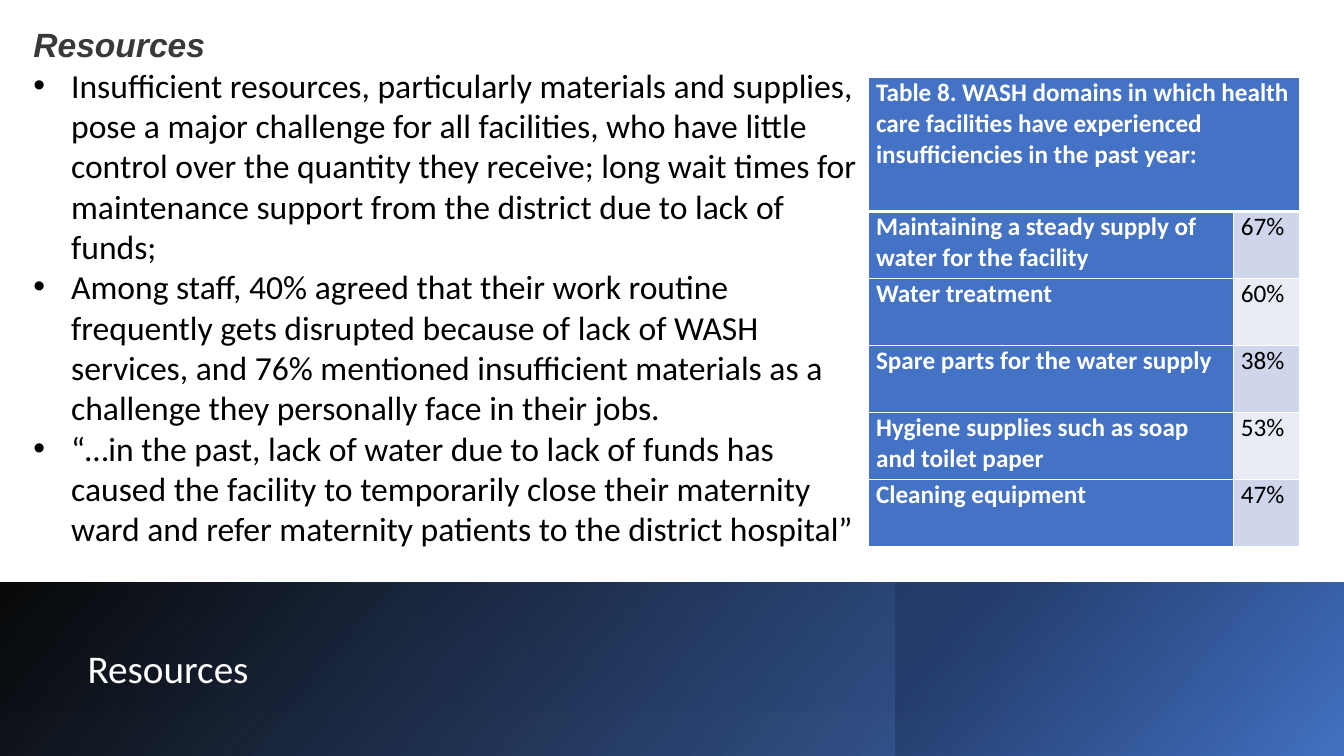
from dataclasses import dataclass
from typing import Any

from lxml import etree
from pptx import Presentation
from pptx.dml.color import RGBColor
from pptx.enum.shapes import MSO_SHAPE
from pptx.enum.text import MSO_ANCHOR, MSO_AUTO_SIZE, PP_ALIGN
from pptx.oxml.ns import qn
from pptx.util import Pt

RECTANGLE = MSO_SHAPE.RECTANGLE
MIDDLE, TOP = MSO_ANCHOR.MIDDLE, MSO_ANCHOR.TOP
GROW, NO_FIT = MSO_AUTO_SIZE.SHAPE_TO_FIT_TEXT, MSO_AUTO_SIZE.NONE
LEFT = PP_ALIGN.LEFT

WHITE = RGBColor(0xFF, 0xFF, 0xFF)
BLACK = RGBColor(0, 0, 0)
CHARCOAL = RGBColor(0x3B, 0x38, 0x38)
BLUE = RGBColor(0x44, 0x72, 0xC4)
MID_BLUE = RGBColor(0x2F, 0x55, 0x97)
NAVY = RGBColor(0x20, 0x38, 0x64)
BAND_DARK = RGBColor(0xCF, 0xD5, 0xEA)
BAND_LIGHT = RGBColor(0xE9, 0xEB, 0xF5)


@dataclass
class Stop:
    position: int
    color: RGBColor
    opacity: int = 100


@dataclass
class Panel:
    left: float
    width: float
    height: float
    angle: int
    stops: tuple[Stop, Stop]
    rotation: int = 0


@dataclass
class Domain:
    label: str
    share: str


BANNER_TOP = 416.2
PANELS = [
    Panel(0, 960, 91.4, 210, (Stop(28, MID_BLUE, 11), Stop(100, BLACK, 77))),
    Panel(0, 960, 125.3, 140, (Stop(0, BLACK, 96), Stop(100, BLUE))),
    Panel(640, 320, 123.8, 320, (Stop(19, NAVY, 68), Stop(100, BLUE, 79)), 180),
]

FINDINGS = [
    "Insufficient resources, particularly materials and supplies, pose a major "
    "challenge for all facilities, who have little control over the quantity they "
    "receive; long wait times for maintenance support from the district due to lack "
    "of funds;",
    "Among staff, 40% agreed that their work routine frequently gets disrupted "
    "because of lack of WASH services, and 76% mentioned insufficient materials as a "
    "challenge they personally face in their jobs.",
    "“…in the past, lack of water due to lack of funds has caused the facility to "
    "temporarily close their maternity ward and refer maternity patients to the "
    "district hospital”",
]

TABLE_HEADING = ("Table 8. WASH domains in which health care facilities have "
                 "experienced insufficiencies in the past year:")
DOMAINS = [
    Domain("Maintaining a steady supply of water for the facility", "67%"),
    Domain("Water treatment", "60%"),
    Domain("Spare parts for the water supply", "38%"),
    Domain("Hygiene supplies such as soap and toilet paper", "53%"),
    Domain("Cleaning equipment", "47%"),
]
COLUMN_WIDTHS = (260.6, 46.8)
HEADING_HEIGHT, DOMAIN_HEIGHT = 95.8, 47.9


def apply(target: Any, formats: dict[str, Any]) -> None:
    for name, value in formats.items():
        setattr(target, name, value)


def place(shape: Any, left: float, top: float, width: float, height: float) -> None:
    apply(shape, {"left": Pt(left), "top": Pt(top),
                  "width": Pt(width), "height": Pt(height)})


def style_font(font: Any, color: RGBColor, **formats: Any) -> None:
    apply(font, formats)
    font.color.rgb = color


def add_panel(shapes: Any, panel: Panel) -> None:
    shape = shapes.add_shape(RECTANGLE, Pt(panel.left), Pt(BANNER_TOP),
                             Pt(panel.width), Pt(panel.height))
    shape.shadow.inherit = False
    shape.line.fill.background()
    shape.rotation = panel.rotation
    properties = shape._element.spPr
    frame = properties.find(qn("a:xfrm"))
    frame.set("flipH", "1")
    # Gradient with per-stop opacity
    gradient = etree.Element(qn("a:gradFill"), rotWithShape="1")
    stop_list = etree.SubElement(gradient, qn("a:gsLst"))
    for stop in panel.stops:
        entry = etree.SubElement(stop_list, qn("a:gs"), pos=str(stop.position * 1000))
        color = etree.SubElement(entry, qn("a:srgbClr"), val=str(stop.color))
        etree.SubElement(color, qn("a:alpha"), val=str(stop.opacity * 1000))
    etree.SubElement(gradient, qn("a:lin"), ang=str(panel.angle * 60000), scaled="0")
    properties.find(qn("a:prstGeom")).addnext(gradient)


def set_bullet(paragraph: Any, bullet: str | None) -> None:
    properties = paragraph._p.get_or_add_pPr()
    indent = Pt(27) if bullet else 0
    properties.set("marL", str(indent))
    properties.set("indent", str(-indent))
    if bullet:
        etree.SubElement(properties, qn("a:buFont"), typeface="Arial")
        etree.SubElement(properties, qn("a:buChar"), char=bullet)
    else:
        etree.SubElement(properties, qn("a:buNone"))


def fill_cell(cell: Any, text: str, fill: RGBColor, color: RGBColor, bold: bool,
              bottom: float = 1, top: float = 1) -> None:
    apply(cell, {"text": text, "margin_left": Pt(5.2), "margin_right": Pt(5.2),
                 "margin_top": 0, "margin_bottom": 0, "vertical_anchor": TOP})
    style_font(cell.text_frame.paragraphs[0].runs[0].font, color,
               name="Calibri", size=Pt(18), bold=bold)
    properties = cell._tc.get_or_add_tcPr()
    for side, width in {"lnL": 1, "lnR": 1, "lnT": top, "lnB": bottom}.items():
        border = etree.SubElement(properties, qn(f"a:{side}"), w=str(Pt(width)))
        solid = etree.SubElement(border, qn("a:solidFill"))
        etree.SubElement(solid, qn("a:srgbClr"), val=str(WHITE))
    cell.fill.solid()
    cell.fill.fore_color.rgb = fill


def add_domain_table(shapes: Any) -> None:
    height = HEADING_HEIGHT + DOMAIN_HEIGHT * len(DOMAINS)
    table = shapes.add_table(len(DOMAINS) + 1, 2, Pt(620.6), Pt(55.4),
                             Pt(sum(COLUMN_WIDTHS)), Pt(height)).table
    for column, width in zip(table.columns, COLUMN_WIDTHS):
        column.width = Pt(width)
    for index, row in enumerate(table.rows):
        row.height = Pt(DOMAIN_HEIGHT if index else HEADING_HEIGHT)
    table.cell(0, 0).merge(table.cell(0, 1))
    fill_cell(table.cell(0, 0), TABLE_HEADING, BLUE, WHITE, True, bottom=3)
    for index, domain in enumerate(DOMAINS, start=1):
        top = 3 if index == 1 else 1
        band = BAND_DARK if index % 2 else BAND_LIGHT
        fill_cell(table.cell(index, 0), domain.label, BLUE, WHITE, True, top=top)
        fill_cell(table.cell(index, 1), domain.share, band, BLACK, False, top=top)


def format_title(title: Any) -> None:
    place(title, 55.4, 443.5, 558.7, 70.6)
    title.text_frame.text = "Resources"
    apply(title.text_frame, {"vertical_anchor": MIDDLE, "auto_size": NO_FIT,
                             "word_wrap": True})
    heading = title.text_frame.paragraphs[0]
    apply(heading, {"alignment": LEFT, "line_spacing": 0.9})
    style_font(heading.runs[0].font, WHITE, name="Calibri", size=Pt(28))


def format_findings(body: Any) -> None:
    place(body, 16.6, 13.7, 604.1, 414.7)
    frame = body.text_frame
    frame.text = "\n".join(["Resources", *FINDINGS])
    apply(frame, {"vertical_anchor": TOP, "auto_size": GROW, "word_wrap": True})
    for index, paragraph in enumerate(frame.paragraphs):
        apply(paragraph, {"alignment": LEFT, "line_spacing": 1.0,
                          "space_before": Pt(0), "space_after": Pt(0)})
        set_bullet(paragraph, "•" if index else None)
        is_heading = index == 0
        style_font(paragraph.runs[0].font, CHARCOAL if is_heading else BLACK,
                   name="Arial" if is_heading else "Calibri", size=Pt(24),
                   bold=is_heading, italic=is_heading)


def main() -> None:
    deck = Presentation()
    apply(deck, {"slide_width": Pt(960), "slide_height": Pt(540)})
    slide = deck.slides.add_slide(deck.slide_layouts[1])
    shapes = slide.shapes
    title, findings = shapes.title, slide.placeholders[1]

    # Banner, with both texts brought in front of it
    for panel in PANELS:
        add_panel(shapes, panel)
    corner = shapes[-1]
    corner._element.addprevious(title._element)
    corner._element.addnext(findings._element)

    # Texts and table
    format_title(title)
    format_findings(findings)
    add_domain_table(shapes)
    deck.save("out.pptx")


if __name__ == "__main__":
    main()
